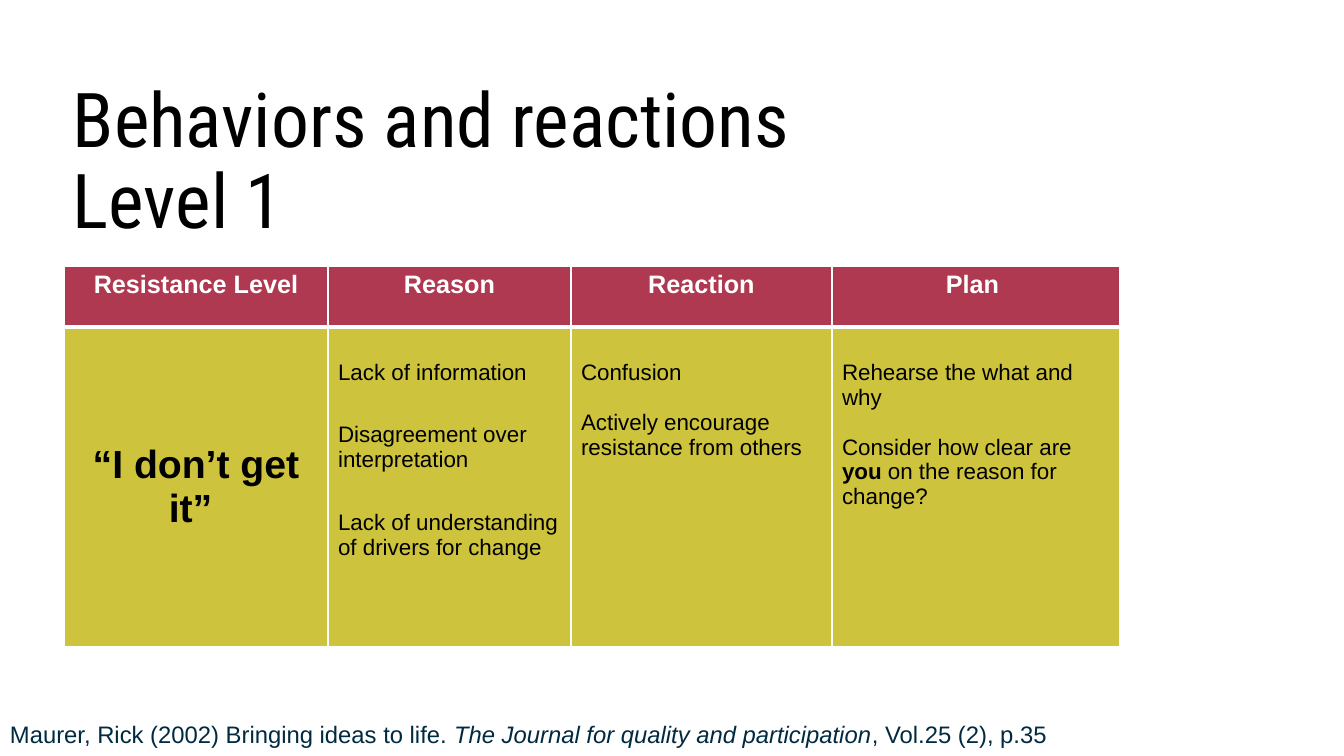
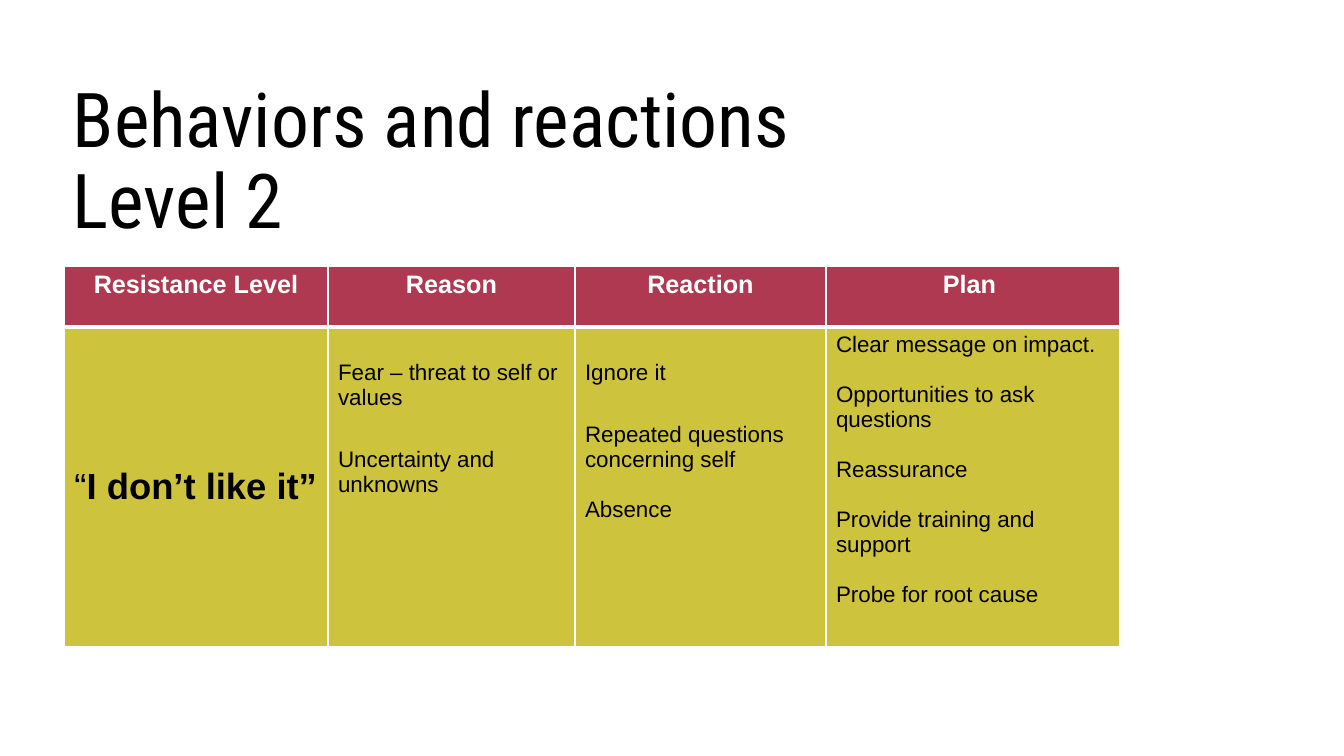
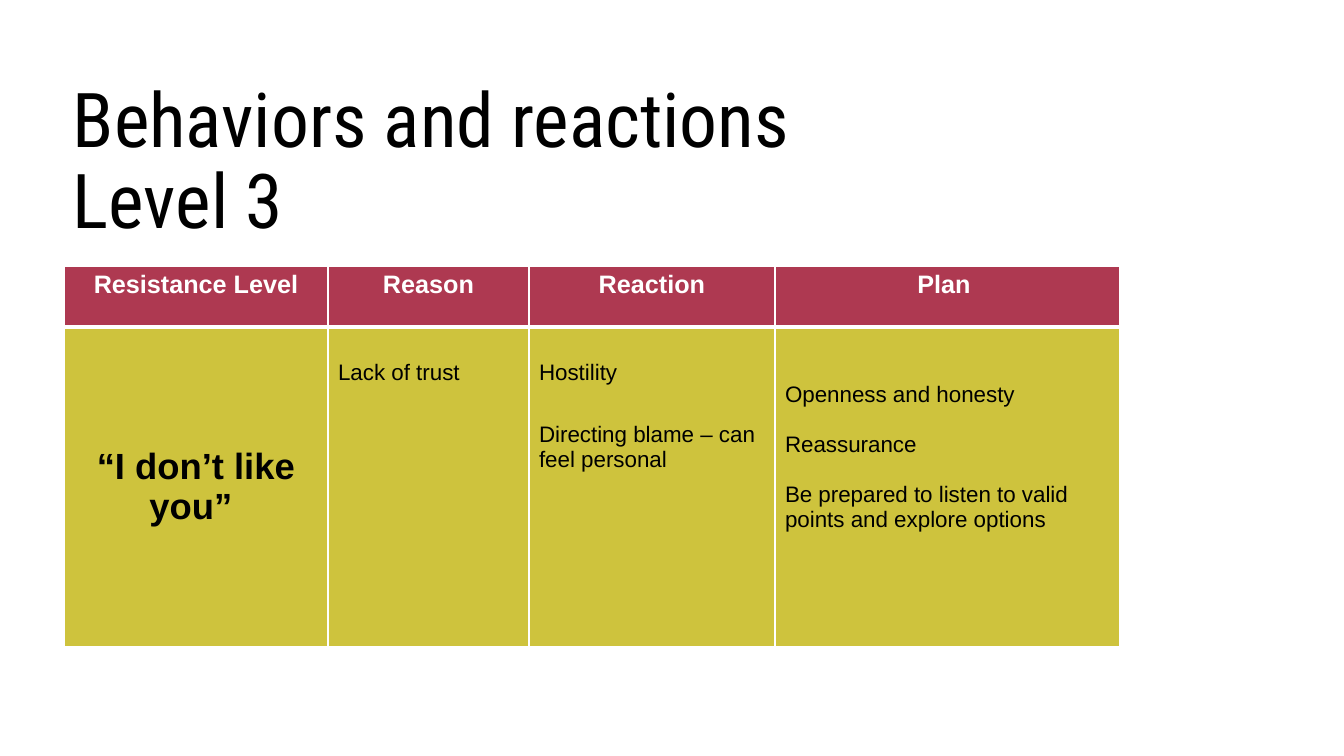
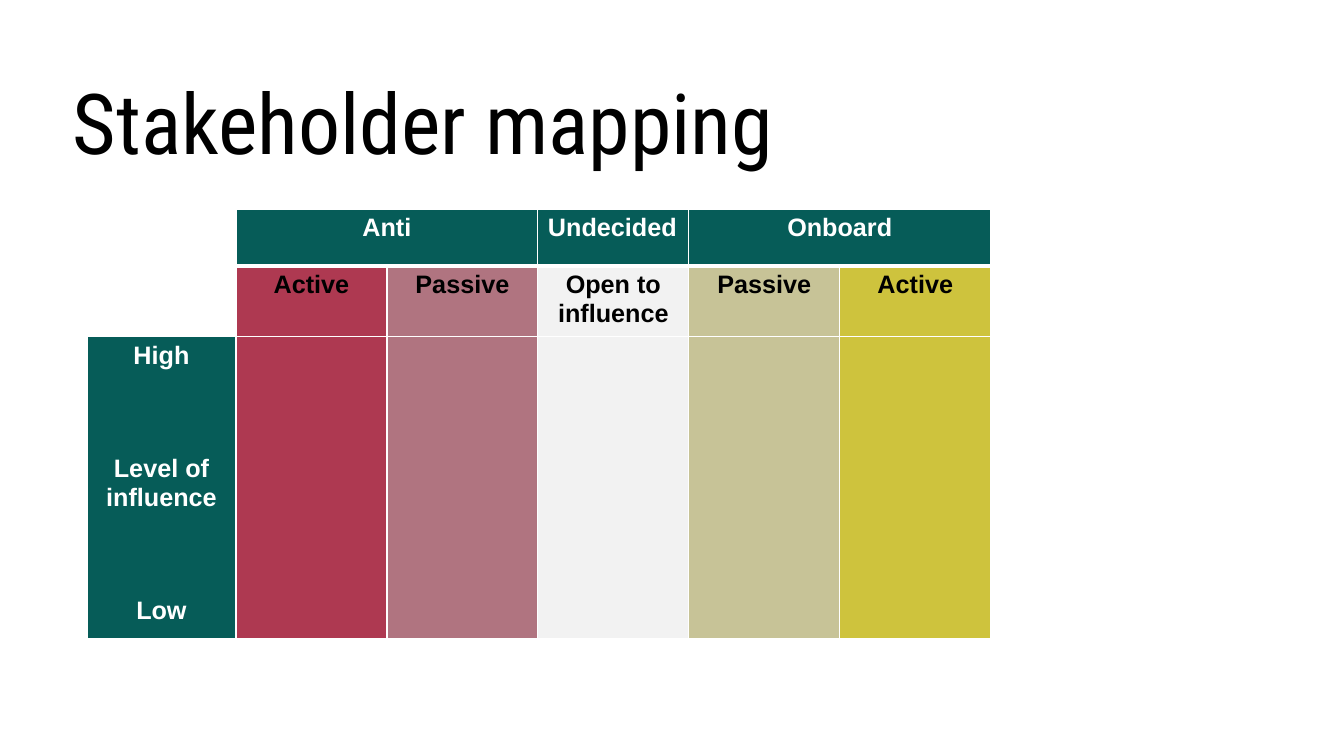
from pptx import Presentation
from pptx.dml.color import RGBColor as RGB
from pptx.enum.text import MSO_ANCHOR as Anchor, PP_ALIGN as Align
from pptx.oxml.ns import qn
from pptx.util import Pt
from lxml.etree import SubElement as Sub

SCALE = 914400 / 100.8
BLACK = RGB(0x00, 0x00, 0x00)
WHITE = RGB(0xFF, 0xFF, 0xFF)
NAVY = RGB(0x00, 0x2A, 0x41)
RED = RGB(0xAE, 0x39, 0x51)
ROSE = RGB(0xB0, 0x74, 0x80)
GREY = RGB(0xF2, 0xF2, 0xF2)
SAND = RGB(0xC7, 0xC3, 0x97)
LIME = RGB(0xCE, 0xC3, 0x3D)
TEAL = RGB(0x06, 0x5C, 0x58)

HEADS = ["Resistance Level", "Reason", "Reaction", "Plan "]
LINE = 18
WIDE = 27
DROP = 33

LEVELS = [
    ([264, 243, 261, 288], "“I don’t get it” ", 28, True, [
        (DROP, WIDE, ["Lack of information", "Disagreement over interpretation",
                      "Lack of understanding of drivers for change"]),
        (DROP, LINE, ["Confusion", "Actively encourage resistance from others"]),
        (DROP, LINE, ["Rehearse the what and why",
                      "Consider how clear are *you* on the reason for change?"]),
    ]),
    ([264, 247, 251, 294], "“*I don’t like it” ", 26, False, [
        (DROP, WIDE, ["Fear – threat to self or values", "Uncertainty and unknowns"]),
        (DROP, (WIDE, LINE), ["Ignore it", "Repeated questions concerning self", "Absence"]),
        (5, LINE, ["Clear message on impact.", "Opportunities to ask questions",
                   "Reassurance", "Provide training and support", "Probe for root cause"]),
    ]),
    ([264, 201, 246, 345], "“I don’t like you” ", 26, True, [
        (DROP, LINE, ["Lack of trust"]),
        (DROP, WIDE, ["Hostility", "Directing blame – can feel personal"]),
        (55, LINE, ["Openness and honesty", "Reassurance",
                    "Be prepared to listen to valid points and explore options"]),
    ]),
]


def px(num):
    return round(num * SCALE)


def write(frame, text, size=18, color=BLACK, font="Arial", bold=False,
          mark="bold", align=Align.LEFT, gap=0, lead=None):
    lines = [text] if isinstance(text, str) else text
    gaps = gap if isinstance(gap, tuple) else (gap,) * (len(lines) - 1)
    frame.word_wrap = True
    for row, line in enumerate(lines):
        para = frame.add_paragraph() if row else frame.paragraphs[0]
        para.alignment = align
        if row:
            para.space_before = Pt(gaps[row - 1])
        if lead:
            para.line_spacing = lead
        for turn, part in enumerate(line.split("*")):
            for step, piece in enumerate(part.split("\n")):
                if step:
                    para.add_line_break()
                run = para.add_run()
                run.text = piece
                face = run.font
                face.name, face.size, face.bold = font, Pt(size), bold
                face.color.rgb = color
                if turn % 2:
                    setattr(face, mark, True)


class Deck:
    def __init__(self):
        self.show = Presentation()
        self.show.slide_width, self.show.slide_height = px(1344), px(756)
        self.slide = None

    def start(self, title):
        self.slide = self.show.slides.add_slide(self.show.slide_layouts[6])
        size = 54 if "\n" in title else 60
        self.text(63, 77, 1159, 108, title, size=size, font="Roboto Condensed", lead=0.9)

    def text(self, left, top, width, height, text, **form):
        box = self.slide.shapes.add_textbox(px(left), px(top), px(width), px(height))
        write(box.text_frame, text, **form)

    def table(self, left, top, cols, rows):
        frame = self.slide.shapes.add_table(
            len(rows), len(cols), px(left), px(top), px(sum(cols)), px(sum(rows)))
        grid = frame.table
        grid.first_row = grid.horz_banding = False
        for col, width in zip(grid.columns, cols):
            col.width = px(width)
        for row, height in zip(grid.rows, rows):
            row.height = px(height)
        for row in range(len(rows)):
            for col in range(len(cols)):
                cell = grid.cell(row, col)
                self.edge(cell, 3 if row == 1 else 1, 1 if row else 3)
                cell.fill.background()
        return grid

    def edge(self, cell, above, below):
        props = cell._tc.get_or_add_tcPr()
        for side, wide in zip("LRTB", (1, 1, above, below)):
            line = Sub(props, qn(f"a:ln{side}"), w=str(Pt(wide)))
            fill = Sub(line, qn("a:solidFill"))
            Sub(fill, qn("a:srgbClr"), val=str(WHITE))

    def cell(self, cell, fill, text=None, top=5, anchor=Anchor.TOP, **form):
        cell.fill.solid()
        cell.fill.fore_color.rgb = fill
        cell.margin_top = px(top)
        cell.vertical_anchor = anchor
        if text:
            write(cell.text_frame, text, **form)

    def level(self, num, cols, quote, size, bold, body):
        self.start(f"Behaviors and reactions\nLevel {num}")
        grid = self.table(64, 266, cols, [61, 320])
        for col, head in enumerate(HEADS):
            self.cell(grid.cell(0, col), RED, head, color=WHITE, bold=True, align=Align.CENTER)
        self.cell(grid.cell(1, 0), LIME, quote, size=size, bold=bold,
                  align=Align.CENTER, anchor=Anchor.MIDDLE)
        for col, (top, gap, lines) in enumerate(body, 1):
            self.cell(grid.cell(1, col), LIME, lines, top=top, size=16, gap=gap)

    def map(self):
        self.start("Stakeholder mapping")
        grid = self.table(87, 209, [149] + [151] * 5, [57, 67, 292])
        for col in (1, 4):
            grid.cell(0, col).merge(grid.cell(0, col + 1))
        for col, head, align in ((1, "Anti", Align.CENTER), (3, "Undecided", Align.LEFT),
                                 (4, "Onboard", Align.CENTER)):
            self.cell(grid.cell(0, col), TEAL, head, color=WHITE, bold=True, align=align)
        names = ["Active", "Passive", "Open to influence", "Passive", "Active"]
        fills = [RED, ROSE, GREY, SAND, LIME]
        for col, (name, fill) in enumerate(zip(names, fills), 1):
            self.cell(grid.cell(1, col), fill, name, bold=True, align=Align.CENTER)
            self.cell(grid.cell(2, col), fill)
        self.cell(grid.cell(2, 0), TEAL, ["High", "Level of influence", "Low"],
                  color=WHITE, bold=True, align=Align.CENTER, gap=61)


def main():
    deck = Deck()
    for num, level in enumerate(LEVELS, 1):
        deck.level(num, *level)
        if num == 1:
            deck.text(0, 715, 1159, 41,
                      "Maurer, Rick (2002) Bringing ideas to life. "
                      "*The Journal for quality and participation*, Vol.25 (2), p.35",
                      size=17, color=NAVY, mark="italic")
    deck.map()
    deck.show.save("out.pptx")


if __name__ == "__main__":
    main()
